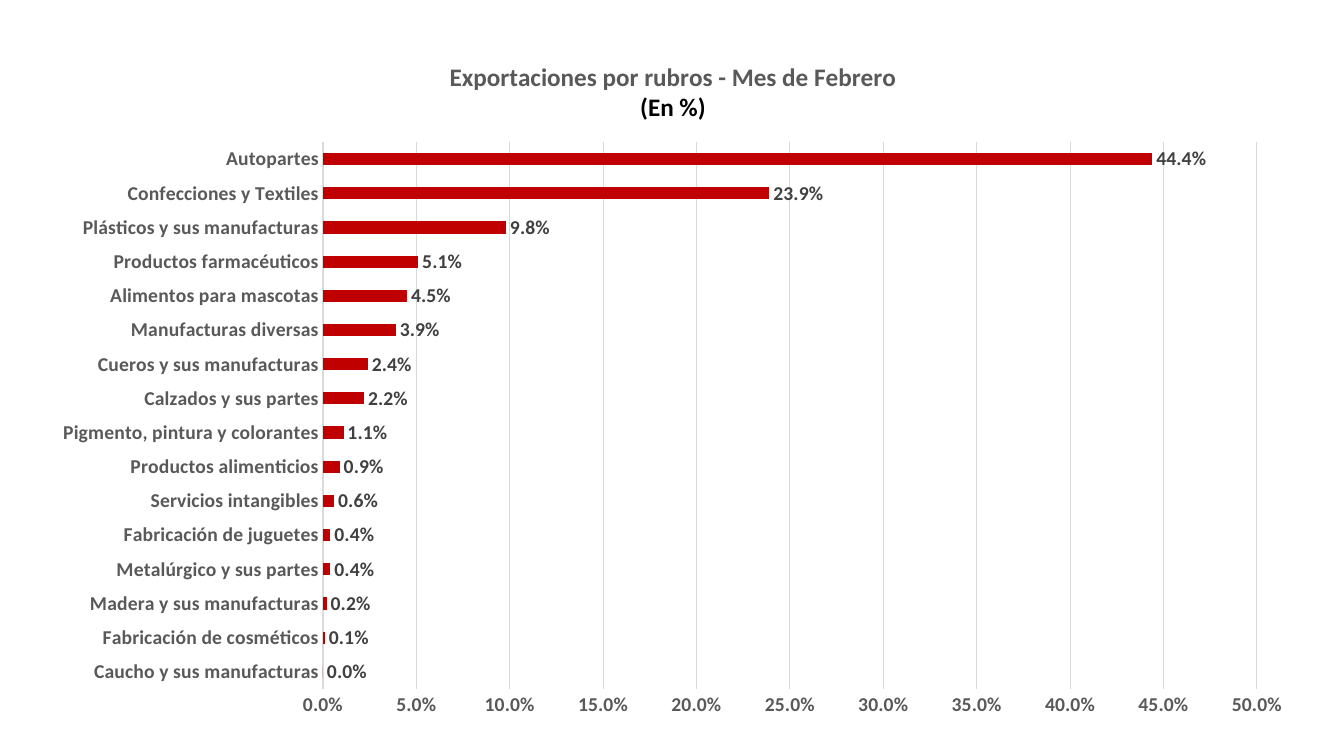
"""Build a slide with a bar chart of February exports by sector."""
from dataclasses import dataclass

from pptx import Presentation
from pptx.chart.chart import Chart
from pptx.chart.data import CategoryChartData
from pptx.dml.color import RGBColor
from pptx.enum.chart import XL_CHART_TYPE as ChartType
from pptx.enum.chart import XL_LABEL_POSITION as LabelPosition
from pptx.enum.chart import XL_TICK_MARK as TickMark
from pptx.oxml import parse_xml
from pptx.oxml.ns import nsdecls, qn
from pptx.text.text import Font, TextFrame
from pptx.util import Emu, Pt

EMU_PER_PX = 914400 / 100.8
FONT_NAME = "Calibri"
PERCENT = "0.0%"
RED = RGBColor(0xC0, 0x00, 0x00)
BLACK = RGBColor(0x00, 0x00, 0x00)
DARK_GREY = RGBColor(0x40, 0x40, 0x40)
GREY = RGBColor(0x59, 0x59, 0x59)
LIGHT_GREY = RGBColor(0xD9, 0xD9, 0xD9)


@dataclass(frozen=True)
class Box:
    """A rectangle in px."""

    left: int
    top: int
    width: int
    height: int


@dataclass(frozen=True)
class Sector:
    """An export sector and its share of the total."""

    name: str
    share: float


CHART_BOX = Box(38, 38, 1270, 693)
PLOT_BOX = Box(323, 142, 934, 547)
SECTORS = [
    Sector("Autopartes", 0.444),
    Sector("Confecciones y Textiles", 0.239),
    Sector("Plásticos y sus manufacturas", 0.098),
    Sector("Productos farmacéuticos", 0.051),
    Sector("Alimentos para mascotas", 0.045),
    Sector("Manufacturas diversas", 0.039),
    Sector("Cueros y sus manufacturas", 0.024),
    Sector("Calzados y sus partes", 0.022),
    Sector("Pigmento, pintura y colorantes", 0.011),
    Sector("Productos alimenticios", 0.009),
    Sector("Servicios intangibles", 0.006),
    Sector("Fabricación de juguetes", 0.004),
    Sector("Metalúrgico y sus partes", 0.004),
    Sector("Madera y sus manufacturas", 0.002),
    Sector("Fabricación de cosméticos", 0.001),
    Sector("Caucho y sus manufacturas", 0),
]


def px(length: int) -> Emu:
    """Turn px into EMU."""
    return Emu(round(length * EMU_PER_PX))


def style_font(font: Font, *, color: RGBColor, size: int = 14, bold: bool = True) -> None:
    """Set the typeface, size, weight and colour of a font."""
    font.name = FONT_NAME
    font.size = Pt(size)
    font.bold = bold
    font.color.rgb = color


def write_line(frame: TextFrame, text: str, *, color: RGBColor, size: int, bold: bool = True) -> None:
    """Write text in the empty first paragraph or in a new one."""
    paragraph = frame.add_paragraph() if frame.text else frame.paragraphs[0]
    run = paragraph.add_run()
    run.text = text
    style_font(run.font, color=color, size=size, bold=bold)


def place_plot(chart: Chart, plot: Box, area: Box) -> None:
    """Fix the inner plot area within the chart area."""
    fractions = {
        "x": (plot.left - area.left) / area.width,
        "y": (plot.top - area.top) / area.height,
        "w": plot.width / area.width,
        "h": plot.height / area.height,
    }
    modes = "".join(f'<c:{axis}Mode val="edge"/>' for axis in "xy")
    values = "".join(f'<c:{key} val="{value:.4f}"/>' for key, value in fractions.items())
    layout = parse_xml(
        f'<c:layout {nsdecls("c")}><c:manualLayout><c:layoutTarget val="inner"/>'
        f"{modes}{values}</c:manualLayout></c:layout>"
    )
    plot_area = chart.element.find(".//" + qn("c:plotArea"))
    for previous in plot_area.findall(qn("c:layout")):
        plot_area.remove(previous)
    plot_area.insert(0, layout)


def style_axes(chart: Chart) -> None:
    """Format both axes and the gridlines."""
    for axis in (chart.category_axis, chart.value_axis):
        axis.major_tick_mark = axis.minor_tick_mark = TickMark.NONE
        style_font(axis.tick_labels.font, color=GREY)
    shares = chart.value_axis
    shares.minimum_scale, shares.maximum_scale, shares.major_unit = 0, 0.5, 0.05
    shares.tick_labels.number_format = PERCENT
    shares.tick_labels.number_format_is_linked = False
    shares.format.line.fill.background()
    for line in (chart.category_axis.format.line, shares.major_gridlines.format.line):
        line.color.rgb = LIGHT_GREY
        line.width = Pt(0.75)


def style_bars(chart: Chart) -> None:
    """Format the bars and their value labels."""
    bars = chart.plots[0]
    bars.gap_width = 182
    bars.vary_by_categories = False
    exports = bars.series[0]
    exports.format.fill.solid()
    exports.format.fill.fore_color.rgb = RED
    exports.invert_if_negative = False
    labels = exports.data_labels
    labels.show_value = True
    labels.position = LabelPosition.OUTSIDE_END
    labels.number_format = PERCENT
    labels.number_format_is_linked = False
    style_font(labels.font, color=DARK_GREY)


def main() -> None:
    """Build and save the slide."""
    deck = Presentation()
    deck.slide_width, deck.slide_height = px(1344), px(756)
    slide = deck.slides.add_slide(deck.slide_layouts[6])

    data = CategoryChartData(number_format=PERCENT)
    bottom_up = SECTORS[::-1]
    data.categories = [sector.name for sector in bottom_up]
    data.add_series("Series 1", [sector.share for sector in bottom_up])
    corners = map(px, (CHART_BOX.left, CHART_BOX.top, CHART_BOX.width, CHART_BOX.height))
    chart = slide.shapes.add_chart(ChartType.BAR_CLUSTERED, *corners, data).chart

    style_font(chart.font, color=BLACK, size=10, bold=False)
    chart.has_legend = False
    title = chart.chart_title
    title.include_in_layout = False
    write_line(title.text_frame, "Exportaciones por rubros - Mes de Febrero", color=GREY, size=18)
    write_line(title.text_frame, "(En %)", color=BLACK, size=18)
    place_plot(chart, PLOT_BOX, CHART_BOX)
    style_axes(chart)
    style_bars(chart)
    deck.save("out.pptx")


if __name__ == "__main__":
    main()
